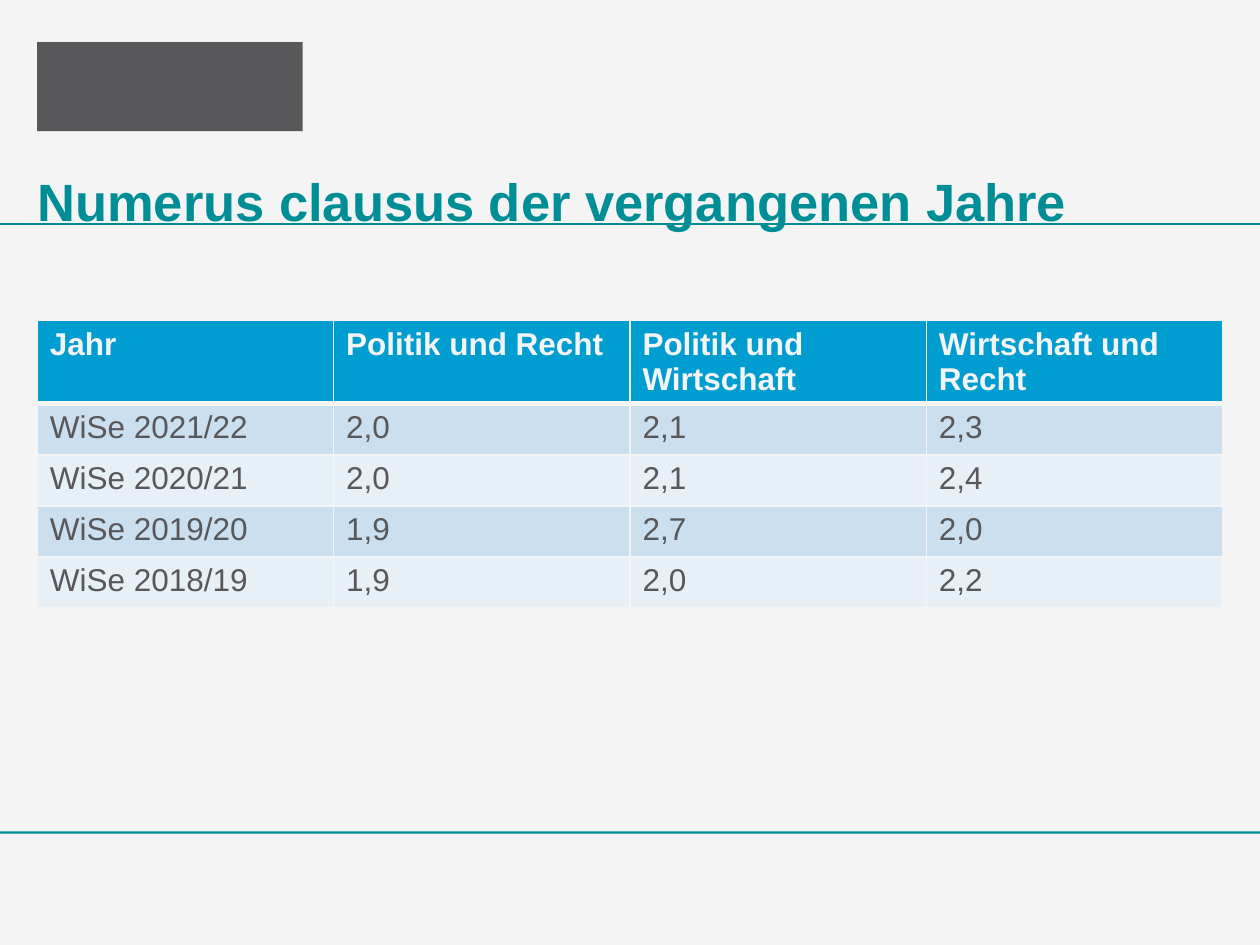
from lxml.etree import SubElement
from pptx import Presentation
from pptx.dml.color import RGBColor
from pptx.enum.shapes import MSO_CONNECTOR, MSO_SHAPE
from pptx.enum.text import MSO_ANCHOR, PP_ALIGN
from pptx.oxml.ns import qn
from pptx.util import Pt

COLORS = {
    "background": "F4F4F4",
    "teal": "008E96",
    "gray": "58585A",
    "header": "009DD1",
    "band_dark": "CCDFEE",
    "band_light": "E7EFF7",
}
FONT = "Arial"
LEFT, WIDTH = 21.3, 677.4


def rgb(name):
    return RGBColor.from_string(COLORS[name])


def add_border(cell, side, width):
    ln = SubElement(cell._tc.get_or_add_tcPr(), qn(f"a:ln{side}"), w=str(Pt(width)))
    fill = SubElement(ln, qn("a:solidFill"))
    SubElement(fill, qn("a:srgbClr"), val=COLORS["background"])


prs = Presentation()
prs.slide_width, prs.slide_height = Pt(720), Pt(540)
s = prs.slides.add_slide(prs.slide_layouts[5])
s.background.fill.solid()
s.background.fill.fore_color.rgb = rgb("background")

# Plain block in the logo's place, and the footer rule
for x, y, w, h, color in [
    (LEFT, 24, 151.7, 51, "gray"),
    (0, 475, 720, 1.4, "teal"),
]:
    sp = s.shapes.add_shape(MSO_SHAPE.RECTANGLE, Pt(x), Pt(y), Pt(w), Pt(h))
    sp.shadow.inherit = False
    sp.fill.solid()
    sp.fill.fore_color.rgb = rgb(color)
    sp.line.fill.background()

# Rule under the title
rule = s.shapes.add_connector(MSO_CONNECTOR.STRAIGHT, Pt(0), Pt(128.2), Pt(720), Pt(128.2))
rule.line.color.rgb = rgb("teal")
rule.line.width = Pt(1)
SubElement(rule._element.spPr, qn("a:effectLst"))

# Title
title = s.shapes.title
title.left, title.top, title.width, title.height = Pt(LEFT), Pt(94.3), Pt(WIDTH), Pt(45.4)
tf = title.text_frame
tf.margin_left = tf.margin_right = tf.margin_top = tf.margin_bottom = 0
tf.vertical_anchor = MSO_ANCHOR.MIDDLE
p = tf.paragraphs[0]
p.alignment = PP_ALIGN.LEFT
p.line_spacing = 0.9
r = p.add_run()
r.text = "Numerus clausus der vergangenen Jahre"
r.font.name, r.font.size, r.font.bold = FONT, Pt(30), True
r.font.color.rgb = rgb("teal")

# Table of admission grades
rows = [
    ("Jahr", "Politik und Recht", "Politik und Wirtschaft", "Wirtschaft und Recht"),
    ("WiSe 2021/22", "2,0", "2,1", "2,3"),
    ("WiSe 2020/21", "2,0", "2,1", "2,4"),
    ("WiSe 2019/20", "1,9", "2,7", "2,0"),
    ("WiSe 2018/19", "1,9", "2,0", "2,2"),
]
ROW_HEIGHT = 29.2
table = s.shapes.add_table(
    len(rows), len(rows[0]), Pt(LEFT), Pt(183.2), Pt(WIDTH), Pt(ROW_HEIGHT * len(rows))
).table
for i, row in enumerate(rows):
    table.rows[i].height = Pt(ROW_HEIGHT)
    is_header = i == 0
    band = "header" if is_header else "band_dark" if i % 2 else "band_light"
    for j, text in enumerate(row):
        cell = table.cell(i, j)
        # The edge between header and body is thicker
        for side, width in [("L", 1), ("R", 1), ("T", 3 if i == 1 else 1), ("B", 3 if is_header else 1)]:
            add_border(cell, side, width)
        cell.fill.solid()
        cell.fill.fore_color.rgb = rgb(band)
        r = cell.text_frame.paragraphs[0].add_run()
        r.text = text
        r.font.name, r.font.size, r.font.bold = FONT, Pt(18), is_header
        r.font.color.rgb = rgb("background" if is_header else "gray")

prs.save("out.pptx")
